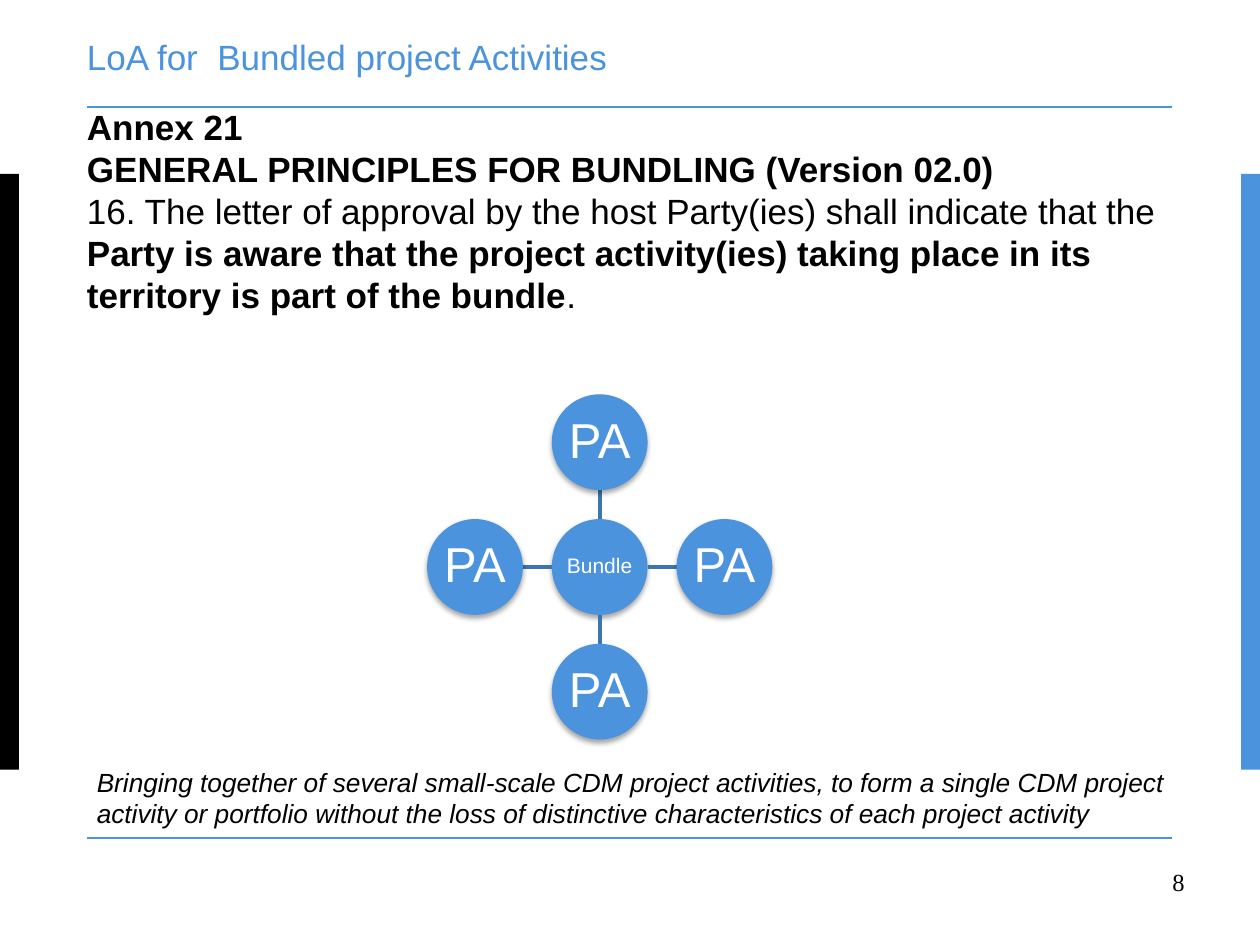
from dataclasses import dataclass

from lxml.etree import SubElement
from pptx import Presentation
from pptx.dml.color import RGBColor as RGB
from pptx.enum.shapes import MSO_CONNECTOR as LINE, MSO_SHAPE as SHAPE
from pptx.enum.text import MSO_ANCHOR as ANCHOR, PP_ALIGN as ALIGN
from pptx.oxml.ns import qn
from pptx.util import Inches, Pt


@dataclass(frozen=True)
class Theme:
    blue: RGB = RGB(0x4B, 0x93, 0xDC)
    spoke: RGB = RGB(0x3C, 0x76, 0xB0)
    black: RGB = RGB(0, 0, 0)
    white: RGB = RGB(255, 255, 255)
    font: str = "Arial"
    serif: str = "Times New Roman"
    head: int = 20
    note: int = 15
    page: int = 14
    hub: int = 12
    node: int = 28


THEME = Theme()


def style(para, size, color, font=THEME.font):
    para.font.size = Pt(size)
    para.font.name = font
    para.font.color.rgb = color


def set_box(shape, box):
    shape.left, shape.top, shape.width, shape.height = map(Inches, box)


def set_frame(frame, inset, anchor=ANCHOR.TOP, wrap=True):
    frame.word_wrap = wrap
    frame.vertical_anchor = anchor
    frame.margin_left = frame.margin_right = Inches(inset)
    frame.margin_top = frame.margin_bottom = Inches(inset)


def add_text(slide, box, inset):
    frame = slide.shapes.add_textbox(*map(Inches, box)).text_frame
    set_frame(frame, inset)
    return frame


def add_shape(slide, kind, box, color):
    shape = slide.shapes.add_shape(kind, *map(Inches, box))
    shape.shadow.inherit = False
    shape.fill.solid()
    shape.fill.fore_color.rgb = color
    shape.line.fill.background()
    return shape


def add_line(slide, start, end, color, width):
    line = slide.shapes.add_connector(LINE.STRAIGHT, *map(Inches, (*start, *end)))
    line.line.color.rgb = color
    line.line.width = Pt(width)
    SubElement(line._element.spPr, qn("a:effectLst"))


def drop_shadow(shape):
    effects = shape._element.spPr.find(qn("a:effectLst"))
    shadow = SubElement(effects, qn("a:outerShdw"), blurRad=str(Pt(3.1)),
                        dist=str(Pt(1.8)), dir="5400000", rotWithShape="0")
    color = SubElement(shadow, qn("a:srgbClr"), val=str(THEME.black))
    SubElement(color, qn("a:alpha"), val="35000")


def add_frame(slide, box):
    """Side bars and the two rules around the content box."""
    left, top, width, height = box
    for x, color in ((0, THEME.black), (9.85, THEME.blue)):
        add_shape(slide, SHAPE.RECTANGLE, (x, 1.38, 0.15, 4.73), color)
    for y in (top, top + height):
        add_line(slide, (left, y), (left + width, y), THEME.blue, 1)


def add_title(slide, box, text):
    title = slide.shapes.title
    set_box(title, box)
    set_frame(title.text_frame, 0, ANCHOR.MIDDLE)
    title.text_frame.text = text
    para = title.text_frame.paragraphs[0]
    para.alignment = ALIGN.LEFT
    para.line_spacing = Pt(15)
    style(para, THEME.head, THEME.blue)


def add_body(slide, box, paras):
    """Write paragraphs given as lists of (text, bold) runs."""
    frame = add_text(slide, box, 0)
    for i, runs in enumerate(paras):
        para = frame.add_paragraph() if i else frame.paragraphs[0]
        para.line_spacing = 1.0
        style(para, THEME.head, THEME.black)
        for text, bold in runs:
            run = para.add_run()
            run.text = text
            run.font.bold = bold


def add_node(slide, x, y, size, text, points):
    box = (x - size / 2, y - size / 2, size, size)
    node = add_shape(slide, SHAPE.OVAL, box, THEME.blue)
    drop_shadow(node)
    set_frame(node.text_frame, 0.01, ANCHOR.MIDDLE, wrap=False)
    node.text_frame.text = text
    para = node.text_frame.paragraphs[0]
    para.alignment = ALIGN.CENTER
    para.line_spacing = 0.9
    style(para, points, THEME.white)


def add_wheel(slide, box, hub, label):
    """A hub with one labelled node on each of its four sides."""
    left, top, side, _ = box
    size = 0.76
    x, y = left + side / 2, top + side / 2
    reach = (side - size) / 2
    add_node(slide, x, y, size, hub, THEME.hub)
    for dx, dy in ((0, -1), (1, 0), (0, 1), (-1, 0)):
        near, far = size / 2, reach - size / 2
        add_line(slide, (x + dx * near, y + dy * near),
                 (x + dx * far, y + dy * far), THEME.spoke, 2)
        add_node(slide, x + dx * reach, y + dy * reach, size, label, THEME.node)


def add_note(slide, box, text):
    frame = add_text(slide, box, 0.05)
    frame.margin_left = frame.margin_right = Inches(0.1)
    frame.text = text
    para = frame.paragraphs[0]
    para.line_spacing = 1.0
    style(para, THEME.note, THEME.black)
    para.font.italic = True


def add_page(slide, box, number):
    frame = add_text(slide, box, 0.05)
    frame.margin_right = Inches(0.1)
    frame.text = number
    para = frame.paragraphs[0]
    para.alignment = ALIGN.RIGHT
    style(para, THEME.page, THEME.black, THEME.serif)


def main():
    deck = Presentation()
    deck.slide_width, deck.slide_height = Inches(10), Inches(7.5)
    slide = deck.slides.add_slide(deck.slide_layouts[5])
    add_frame(slide, (0.69, 0.85, 8.61, 5.8))
    add_page(slide, (7.17, 6.83, 2.33, 0.52), "8")
    add_title(slide, (0.69, 0.34, 8.61, 0.34), "LoA for  Bundled project Activities")
    add_body(slide, (0.69, 0.84, 9.03, 1.7), [
        [("Annex 21", True)],
        [("GENERAL PRINCIPLES FOR BUNDLING (Version 02.0)", True)],
        [("16. The letter of approval by the host Party(ies) shall indicate that the ", False),
         ("Party is aware that the project activity(ies) taking place in its "
          "territory is part of the bundle", True),
         (".", False)],
    ])
    add_wheel(slide, (3.39, 3.13, 2.74, 2.74), "Bundle", "PA")
    add_note(slide, (0.67, 6.03, 9.13, 0.61),
             "Bringing together of several small-scale CDM project activities, to form "
             "a single CDM project activity or portfolio without the loss of "
             "distinctive characteristics of each project activity")
    deck.save("out.pptx")


if __name__ == "__main__":
    main()
